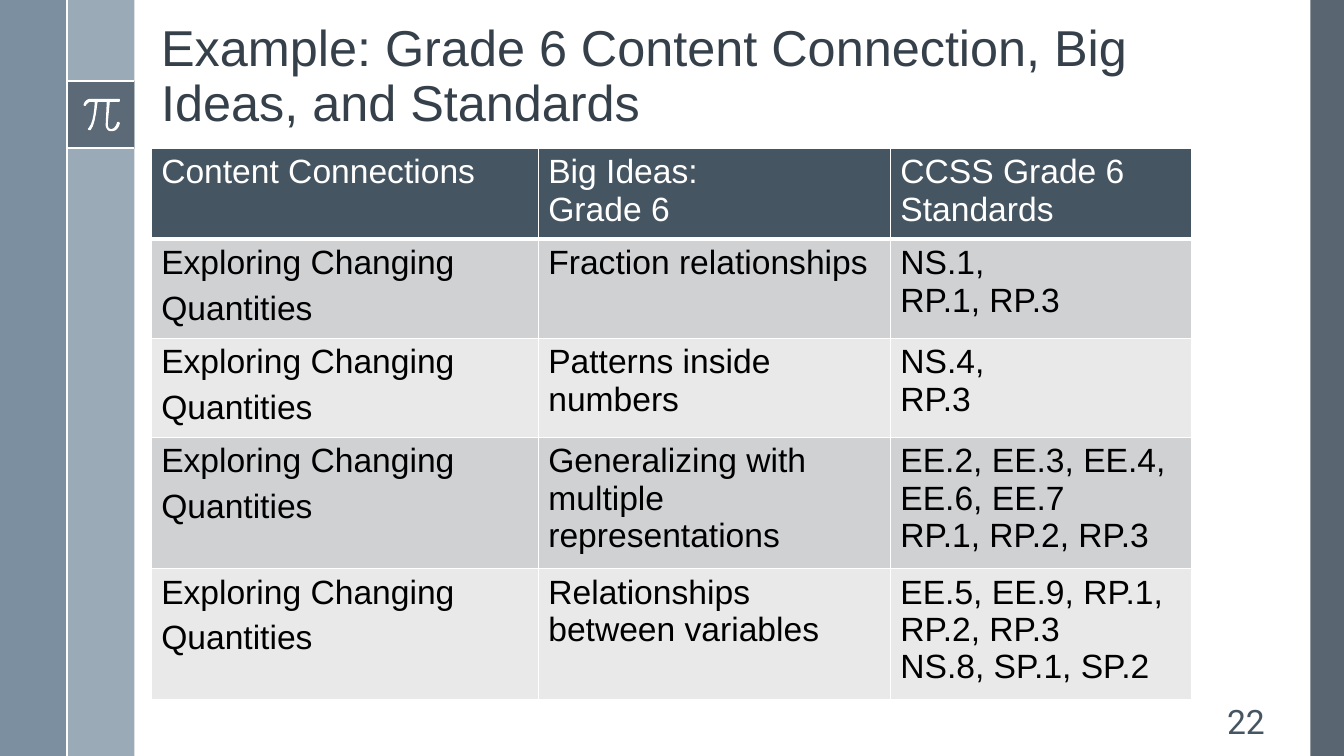
from dataclasses import dataclass

from lxml import etree
from pptx import Presentation
from pptx.dml.color import RGBColor
from pptx.enum.shapes import MSO_CONNECTOR, MSO_SHAPE
from pptx.enum.text import MSO_ANCHOR, PP_ALIGN
from pptx.oxml.ns import qn
from pptx.util import Pt

RECTANGLE = MSO_SHAPE.RECTANGLE
STRAIGHT = MSO_CONNECTOR.STRAIGHT
BOTTOM, MIDDLE = MSO_ANCHOR.BOTTOM, MSO_ANCHOR.MIDDLE
LEFT, RIGHT = PP_ALIGN.LEFT, PP_ALIGN.RIGHT

SLIDE_WIDTH, SLIDE_HEIGHT = 960, 540
STRIP = 48  # width of each left strip
TILE_TOP, TILE_BOTTOM = 58, 106
WHITE, BLACK, SLATE = "FFFFFF", "000000", "465562"
BANDS = ("CFD1D3", "E9E9EA")


@dataclass
class Panel:
    left: float
    top: float
    width: float
    height: float
    color: str
    opacity: int = 100


@dataclass
class Rule:
    x1: float
    y1: float
    x2: float
    y2: float


@dataclass
class Label:
    text: str
    left: float
    top: float
    width: float
    height: float
    size: float
    font: str
    color: str
    anchor: MSO_ANCHOR
    align: PP_ALIGN = LEFT
    line_spacing: float = 1.0


@dataclass
class TableRow:
    height: float
    texts: tuple[str, str, str]


PANELS = [
    Panel(936, 0, 24, SLIDE_HEIGHT, "475562", 90),
    Panel(STRIP, 0, STRIP, SLIDE_HEIGHT, "9BAAB7"),
    Panel(0, 0, STRIP, SLIDE_HEIGHT, "6A8093", 88),
    Panel(STRIP, TILE_TOP, STRIP, TILE_BOTTOM - TILE_TOP, "475562", 75),
]
RULES = [
    Rule(STRIP, TILE_TOP, 2 * STRIP, TILE_TOP),
    Rule(STRIP, TILE_BOTTOM, 2 * STRIP, TILE_BOTTOM),
    Rule(STRIP, 0, STRIP, SLIDE_HEIGHT),
]
LABELS = [
    Label("Example: Grade 6 Content Connection, Big Ideas, and Standards",
          108, 0, 788, 98, 36, "Arial", "35404A", BOTTOM, line_spacing=0.9),
    Label("22", 847.5, 500.5, 63, 29, 24, "Roboto", SLATE, MIDDLE, RIGHT),
]

# Pi outline: one point is a straight side, three points are a cubic curve
PI_UNIT = 0.72
PI_START = (118, 98)
PI_SIDES = [
    [(90, 98)], [(85, 98), (83, 103), (83, 104)], [(83, 104), (83, 105), (84, 105)],
    [(85, 105)], [(85, 105), (87, 101), (90, 101)], [(94, 101)],
    [(94, 105), (93, 122), (88, 127)], [(87, 128), (87, 128), (88, 129)], [(90, 129)],
    [(95, 123), (96, 105), (97, 101)], [(106, 101)], [(105, 122)],
    [(105, 122), (104, 126), (107, 129)], [(108, 130), (109, 130), (110, 130)],
    [(111, 130), (111, 130), (112, 130)], [(117, 130), (119, 123), (119, 122)],
    [(119, 122), (118, 121), (118, 121)], [(117, 121), (116, 121), (116, 122)],
    [(116, 122), (115, 127), (111, 128)], [(110, 128), (109, 128), (108, 127)],
    [(107, 126), (107, 123), (107, 122)], [(109, 101)], [(118, 101)],
    [(119, 101), (119, 100), (119, 100)], [(119, 99), (119, 98), (118, 98)],
]

# Table content: \n starts a paragraph, \v breaks a line
CONNECTION = "Exploring Changing\nQuantities"
COLUMN_WIDTHS = (276.5, 251.5, 215)
TABLE_ROWS = [
    TableRow(60.5, ("Content Connections", "Big Ideas:\vGrade 6", "CCSS Grade 6 Standards")),
    TableRow(66.5, (CONNECTION, "Fraction relationships", "NS.1,\vRP.1, RP.3")),
    TableRow(66.5, (CONNECTION, "Patterns inside numbers", "NS.4,\vRP.3")),
    TableRow(87.5, (CONNECTION, "Generalizing with multiple representations",
                    "EE.2, EE.3, EE.4, EE.6, EE.7\vRP.1, RP.2, RP.3")),
    TableRow(87.5, (CONNECTION, "Relationships between variables",
                    "EE.5, EE.9, RP.1, RP.2, RP.3\vNS.8, SP.1, SP.2")),
]


def paint(color_format, color: str) -> None:
    color_format.rgb = RGBColor.from_string(color)


def fill_shape(shape, color: str, opacity: int = 100) -> None:
    shape.shadow.inherit = False
    shape.line.fill.background()
    shape.fill.solid()
    paint(shape.fill.fore_color, color)
    if opacity < 100:
        tint = shape.element.spPr.find(qn("a:solidFill"))[0]
        etree.SubElement(tint, qn("a:alpha"), val=str(opacity * 1000))


def style_runs(paragraph, size: float, font: str, color: str) -> None:
    for run in paragraph.runs:
        run.font.size, run.font.name, run.font.bold = Pt(size), font, False
        paint(run.font.color, color)


def draw_panel(slide, panel: Panel) -> None:
    shape = slide.shapes.add_shape(RECTANGLE, Pt(panel.left), Pt(panel.top),
                                   Pt(panel.width), Pt(panel.height))
    fill_shape(shape, panel.color, panel.opacity)


def draw_rule(slide, rule: Rule) -> None:
    line = slide.shapes.add_connector(STRAIGHT, Pt(rule.x1), Pt(rule.y1),
                                      Pt(rule.x2), Pt(rule.y2))
    line.line.width = Pt(1.5)
    paint(line.line.color, WHITE)
    etree.SubElement(line.element.spPr, qn("a:effectLst"))


def draw_pi(slide, steps: int = 6) -> None:
    outline = [PI_START]
    for side in PI_SIDES:
        if len(side) == 1:
            outline += side
            continue
        corners = [outline[-1], *side]
        for step in range(1, steps + 1):
            t = step / steps
            weights = ((1 - t) ** 3, 3 * t * (1 - t) ** 2, 3 * t * t * (1 - t), t ** 3)
            outline.append(tuple(sum(w * c[axis] for w, c in zip(weights, corners))
                                 for axis in (0, 1)))
    points = [(Pt(x * PI_UNIT), Pt(y * PI_UNIT)) for x, y in outline]
    builder = slide.shapes.build_freeform(*points[0])
    builder.add_line_segments(points[1:], close=True)
    fill_shape(builder.convert_to_shape(), WHITE)


def draw_label(slide, label: Label) -> None:
    frame = slide.shapes.add_textbox(Pt(label.left), Pt(label.top), Pt(label.width),
                                     Pt(label.height)).text_frame
    frame.word_wrap, frame.vertical_anchor = True, label.anchor
    frame.text = label.text
    paragraph = frame.paragraphs[0]
    paragraph.alignment, paragraph.line_spacing = label.align, label.line_spacing
    style_runs(paragraph, label.size, label.font, label.color)


def add_borders(cell, bottom: float) -> None:
    properties = cell._tc.get_or_add_tcPr()
    widths = {"a:lnL": 1, "a:lnR": 1, "a:lnT": 1, "a:lnB": bottom}
    for index, (tag, width) in enumerate(widths.items()):
        border = etree.Element(qn(tag), w=str(Pt(width)))
        fill = etree.SubElement(border, qn("a:solidFill"))
        etree.SubElement(fill, qn("a:srgbClr"), val=WHITE)
        properties.insert(index, border)


def draw_table(slide, rows: list[TableRow]) -> None:
    table = slide.shapes.add_table(
        len(rows), len(COLUMN_WIDTHS), Pt(108), Pt(TILE_BOTTOM),
        Pt(sum(COLUMN_WIDTHS)), Pt(sum(row.height for row in rows))).table
    table.horz_banding = False
    for column, width in zip(table.columns, COLUMN_WIDTHS):
        column.width = Pt(width)
    for r, row in enumerate(rows):
        is_header = r == 0
        table.rows[r].height = Pt(row.height)
        for c, text in enumerate(row.texts):
            cell = table.cell(r, c)
            cell.fill.solid()
            paint(cell.fill.fore_color, SLATE if is_header else BANDS[(r - 1) % 2])
            add_borders(cell, 3 if is_header else 1)
            cell.text_frame.text = text
            for paragraph in cell.text_frame.paragraphs:
                if c == 0 and not is_header:
                    paragraph.space_before = Pt(6)
                style_runs(paragraph, 24, "Arial", WHITE if is_header else BLACK)


def main() -> None:
    deck = Presentation()
    deck.slide_width, deck.slide_height = Pt(SLIDE_WIDTH), Pt(SLIDE_HEIGHT)
    slide = deck.slides.add_slide(deck.slide_layouts[6])
    # Side strips with the pi tile
    for panel in PANELS:
        draw_panel(slide, panel)
    for rule in RULES:
        draw_rule(slide, rule)
    draw_pi(slide)
    # Title, page number and standards table
    for label in LABELS:
        draw_label(slide, label)
    draw_table(slide, TABLE_ROWS)
    deck.save("out.pptx")


if __name__ == "__main__":
    main()
